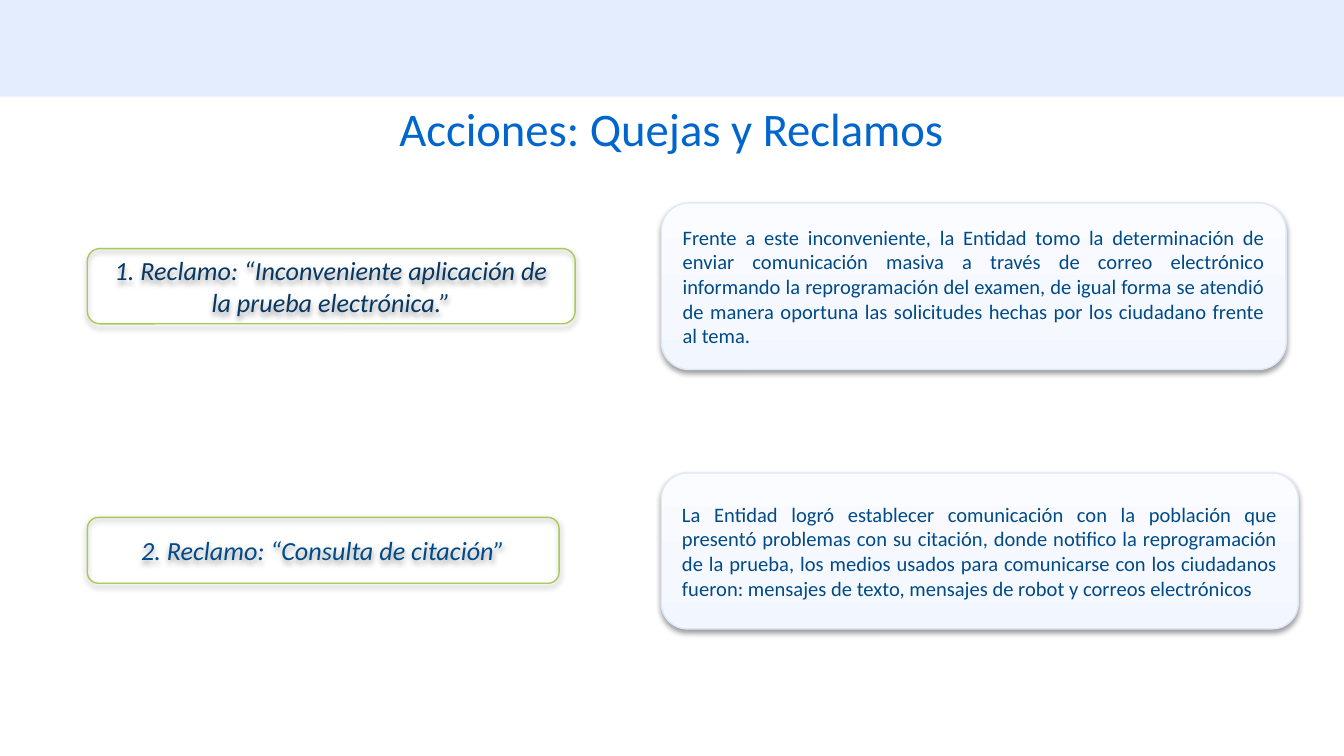
"""Build the slide on actions taken for complaints and claims."""
from dataclasses import dataclass

from lxml.etree import SubElement
from pptx import Presentation
from pptx.dml.color import RGBColor
from pptx.enum.shapes import MSO_SHAPE
from pptx.enum.text import MSO_ANCHOR, MSO_AUTO_SIZE, PP_ALIGN
from pptx.oxml.ns import qn
from pptx.shapes.autoshape import Shape
from pptx.slide import Slide
from pptx.text.text import _Paragraph
from pptx.util import Inches, Pt

RECT, ROUND = MSO_SHAPE.RECTANGLE, MSO_SHAPE.ROUNDED_RECTANGLE
MIDDLE, NO_FIT = MSO_ANCHOR.MIDDLE, MSO_AUTO_SIZE.NONE
CENTER, JUSTIFY = PP_ALIGN.CENTER, PP_ALIGN.JUSTIFY


@dataclass(frozen=True)
class Theme:
    font: str = "Calibri"
    band: str = "E4EDFE"
    title: str = "0066CD"
    navy: str = "073763"
    blue: str = "004A87"
    green: str = "AACA57"
    edge: str = "DEE8F9"
    shade: str = "000000"
    blend: tuple[tuple[int, str], ...] = ((0, "F1F6FF"), (35, "F5F8FF"), (100, "FBFCFF"))
    title_size: float = 25
    claim_size: float = 14
    reply_size: float = 11
    line: float = 0.75


@dataclass(frozen=True)
class Box:
    left: float
    top: float
    width: float
    height: float
    text: str


@dataclass(frozen=True)
class Case:
    claim: Box
    color: str
    reply: Box


THEME = Theme()
CLAIM_LEFT, REPLY_LEFT = 0.65, 4.92
CASES = (
    Case(
        Box(CLAIM_LEFT, 1.85, 3.63, 0.56,
            "1. Reclamo: “Inconveniente aplicación de la prueba electrónica.”"),
        THEME.navy,
        Box(REPLY_LEFT, 1.51, 4.65, 1.24,
            "Frente a este inconveniente, la Entidad tomo la determinación de enviar "
            "comunicación masiva a través de correo electrónico informando la "
            "reprogramación del examen, de igual forma se atendió de manera oportuna "
            "las solicitudes hechas por los ciudadano frente al tema."),
    ),
    Case(
        Box(CLAIM_LEFT, 3.85, 3.51, 0.49, "2. Reclamo: “Consulta de citación”"),
        THEME.blue,
        Box(REPLY_LEFT, 3.52, 4.74, 1.16,
            "La Entidad logró establecer comunicación con la población que presentó "
            "problemas con su citación, donde notifico la reprogramación de la prueba, "
            "los medios usados para comunicarse con los ciudadanos fueron: mensajes de "
            "texto, mensajes de robot y correos electrónicos"),
    ),
)


def add_run(para: _Paragraph, text: str, size: float, color: str, italic: bool = False) -> None:
    """Add one styled run to a paragraph."""
    run = para.add_run()
    run.text = text
    run.font.name = THEME.font
    run.font.size = Pt(size)
    run.font.italic = italic
    run.font.color.rgb = RGBColor.from_string(color)


def add_shade(shape: Shape) -> None:
    """Give a shape a soft shadow straight below it."""
    shape.shadow.inherit = False
    effects = shape.element.spPr.find(qn("a:effectLst"))
    shade = SubElement(effects, qn("a:outerShdw"), blurRad=str(Pt(3.1)), dist=str(Pt(1.6)),
                       dir="5400000", rotWithShape="0")
    color = SubElement(shade, qn("a:srgbClr"), val=THEME.shade)
    SubElement(color, qn("a:alpha"), val="38000")


def add_blend(shape: Shape) -> None:
    """Fill a shape with the theme gradient, rising from the bottom."""
    shape.fill.gradient()
    shape.fill.gradient_angle = 90
    stops = shape.element.spPr.find(".//" + qn("a:gsLst"))
    stops.clear()
    for place, color in THEME.blend:
        stop = SubElement(stops, qn("a:gs"), pos=str(place * 1000))
        SubElement(stop, qn("a:srgbClr"), val=color)


def add_box(slide: Slide, box: Box, edge: str, align: PP_ALIGN) -> Shape:
    """Draw an outlined rounded box and return it ready for text."""
    shape = slide.shapes.add_shape(ROUND, Inches(box.left), Inches(box.top),
                                   Inches(box.width), Inches(box.height))
    shape.line.color.rgb = RGBColor.from_string(edge)
    shape.line.width = Pt(THEME.line)
    add_shade(shape)
    frame = shape.text_frame
    frame.word_wrap = True
    frame.vertical_anchor = MIDDLE
    frame.paragraphs[0].alignment = align
    return shape


def add_case(slide: Slide, case: Case) -> None:
    """Draw a claim and the reply beside it."""
    claim = add_box(slide, case.claim, THEME.green, CENTER)
    claim.fill.background()
    add_run(claim.text_frame.paragraphs[0], case.claim.text, THEME.claim_size, case.color, True)
    reply = add_box(slide, case.reply, THEME.edge, JUSTIFY)
    add_blend(reply)
    add_run(reply.text_frame.paragraphs[0], case.reply.text, THEME.reply_size, THEME.blue)


def add_band(slide: Slide, width: int) -> None:
    """Draw the plain band along the top edge."""
    band = slide.shapes.add_shape(RECT, 0, 0, width, Inches(0.72))
    band.shadow.inherit = False
    band.fill.solid()
    band.fill.fore_color.rgb = RGBColor.from_string(THEME.band)
    band.line.fill.background()


def set_title(slide: Slide, text: str) -> None:
    """Place and fill the title placeholder."""
    title = slide.shapes.title
    title.left, title.top = Inches(2.12), Inches(0.7)
    title.width, title.height = Inches(5.75), Inches(0.56)
    frame = title.text_frame
    frame.auto_size = NO_FIT
    frame.word_wrap = True
    frame.vertical_anchor = MIDDLE
    frame.margin_left = frame.margin_right = Inches(0.07)
    frame.margin_top = frame.margin_bottom = Inches(0.04)
    para = frame.paragraphs[0]
    para.alignment = CENTER
    para.line_spacing = 0.9
    add_run(para, text, THEME.title_size, THEME.title)


def main() -> None:
    """Build and save the deck."""
    deck = Presentation()
    deck.slide_width = Inches(10)
    deck.slide_height = deck.slide_width * 9 // 16
    slide = deck.slides.add_slide(deck.slide_layouts[5])
    add_band(slide, deck.slide_width)
    set_title(slide, "Acciones: Quejas y Reclamos")
    for case in CASES:
        add_case(slide, case)
    deck.save("out.pptx")


if __name__ == "__main__":
    main()
